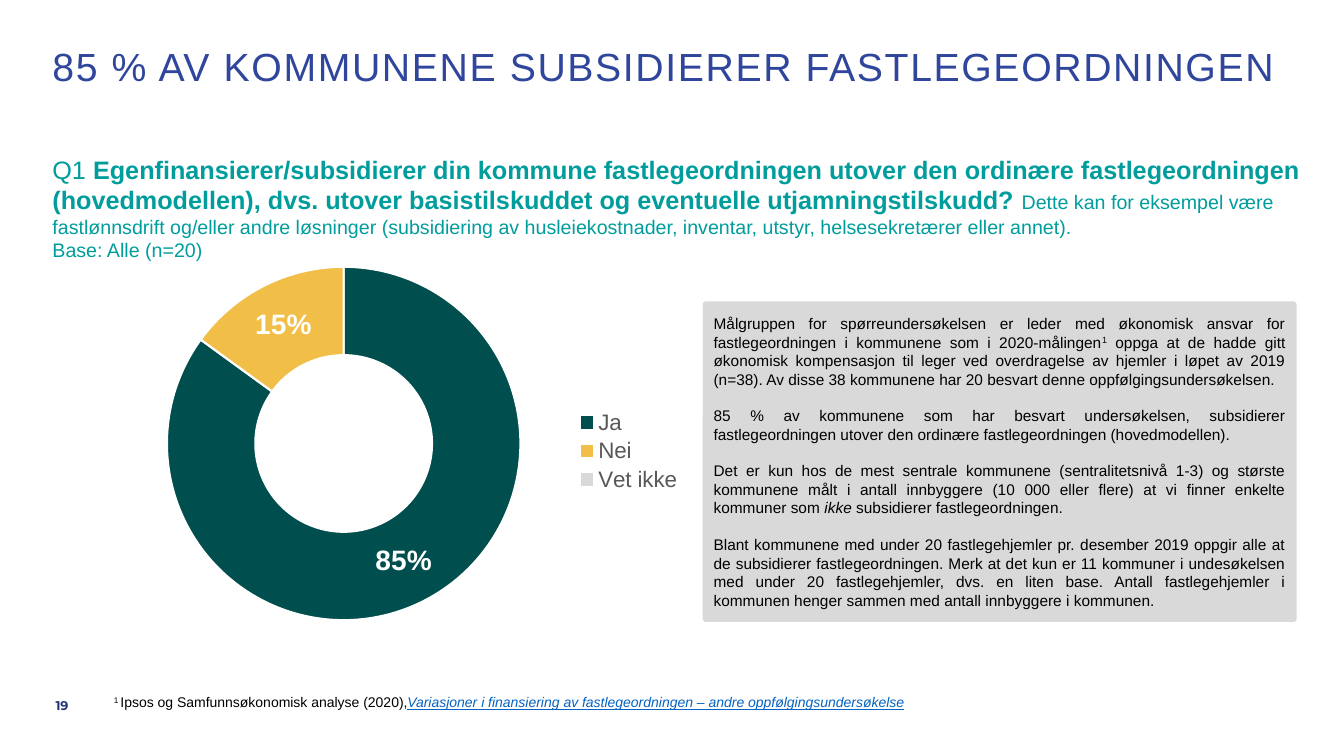
from dataclasses import dataclass
from typing import NamedTuple, Optional

from lxml.etree import SubElement
from pptx import Presentation
from pptx.chart.data import CategoryChartData
from pptx.dml.color import RGBColor
from pptx.enum.chart import XL_CHART_TYPE, XL_LEGEND_POSITION
from pptx.enum.shapes import MSO_SHAPE
from pptx.enum.text import MSO_ANCHOR, MSO_AUTO_SIZE, PP_ALIGN
from pptx.oxml import parse_xml
from pptx.oxml.ns import nsdecls, qn
from pptx.util import Emu, Pt

EMU_PER_PX = 9144


@dataclass(frozen=True)
class Theme:
    font: str = "Arial"
    number_font: str = "Montserrat"
    title: str = "2F469C"
    question: str = "009D9C"
    number: str = "233475"
    text: str = "000000"
    link: str = "0563C1"
    legend: str = "595959"
    panel: str = "D9D9D9"
    white: str = "FFFFFF"
    title_size: int = 28
    label_size: int = 20
    question_size: int = 18
    legend_size: int = 16
    detail_size: int = 14
    panel_size: int = 11
    note_size: int = 10
    number_size: int = 9


THEME = Theme()


class Box(NamedTuple):
    left: int
    top: int
    width: int
    height: int


class Insets(NamedTuple):
    left: int = 10
    top: int = 5
    right: int = 10
    bottom: int = 5


class Span(NamedTuple):
    text: str
    size: int
    color: str = THEME.text
    bold: bool = False
    italic: bool = False
    underline: bool = False
    superscript: bool = False
    spacing: int = 0
    font: str = THEME.font


class Answer(NamedTuple):
    name: str
    share: float
    color: str


def panel_span(text: str, italic: bool = False, superscript: bool = False) -> Span:
    return Span(text, THEME.panel_size, italic=italic, superscript=superscript)


def question_span(text: str, size: int, bold: bool = False) -> Span:
    return Span(text, size, THEME.question, bold)


TITLE = [[Span("85 % AV KOMMUNENE SUBSIDIERER FASTLEGEORDNINGEN",
               THEME.title_size, THEME.title, spacing=120)]]
QUESTION = [
    [question_span("Q1 ", THEME.question_size),
     question_span("Egenfinansierer/subsidierer din kommune fastlegeordningen utover den ordinære "
                   "fastlegeordningen (hovedmodellen), dvs. utover basistilskuddet og eventuelle "
                   "utjamningstilskudd? ", THEME.question_size, bold=True),
     question_span("Dette kan for eksempel være fastlønnsdrift og/eller andre løsninger "
                   "(subsidiering av husleiekostnader, inventar, utstyr, helsesekretærer eller "
                   "annet).", THEME.detail_size)],
    [question_span("Base: Alle (n=20)", THEME.detail_size)],
]
FINDINGS = [
    [panel_span("Målgruppen for spørreundersøkelsen er leder med økonomisk ansvar for "
                "fastlegeordningen i kommunene som i 2020-målingen"),
     panel_span("1", superscript=True),
     panel_span(" oppga at de hadde gitt økonomisk kompensasjon til leger ved overdragelse av "
                "hjemler i løpet av 2019 (n=38). Av disse 38 kommunene har 20 besvart denne "
                "oppfølgingsundersøkelsen.")],
    [panel_span("85 % av kommunene som har besvart undersøkelsen, subsidierer fastlegeordningen "
                "utover den ordinære fastlegeordningen (hovedmodellen).")],
    [panel_span("Det er kun hos de mest sentrale kommunene (sentralitetsnivå 1-3) og største "
                "kommunene målt i antall innbyggere (10 000 eller flere) at vi finner enkelte "
                "kommuner som "),
     panel_span("ikke", italic=True),
     panel_span(" subsidierer fastlegeordningen.")],
    [panel_span("Blant kommunene med under 20 fastlegehjemler pr. desember 2019 oppgir alle at de "
                "subsidierer fastlegeordningen. Merk at det kun er 11 kommuner i undesøkelsen med "
                "under 20 fastlegehjemler, dvs. en liten base. Antall fastlegehjemler i kommunen "
                "henger sammen med antall innbyggere i kommunen.")],
]
FOOTNOTE = [[
    Span("1 ", THEME.note_size, superscript=True),
    Span("Ipsos og Samfunnsøkonomisk analyse (2020),", THEME.note_size),
    Span("Variasjoner i finansiering av fastlegeordningen – andre oppfølgingsundersøkelse",
         THEME.note_size, THEME.link, italic=True, underline=True),
]]
PAGE_NUMBER = [[Span("19", THEME.number_size, THEME.number, bold=True, font=THEME.number_font)]]
ANSWERS = [Answer("Ja", 0.85, "004E4E"), Answer("Nei", 0.15, "F1BE48"),
           Answer("Vet ikke", 0, "D9D9D9")]


def px(length: int) -> Emu:
    return Emu(length * EMU_PER_PX)


def place(shape, box: Box) -> None:
    shape.left, shape.top, shape.width, shape.height = map(px, box)


def style_font(font, size: int, color: str, bold: bool = False, name: str = THEME.font) -> None:
    font.name, font.size, font.bold = name, Pt(size), bold
    font.color.rgb = RGBColor.from_string(color)


def write(shape, paragraphs: list[list[Span]], insets: Insets = Insets(),
          align: PP_ALIGN = PP_ALIGN.LEFT, anchor: MSO_ANCHOR = MSO_ANCHOR.TOP,
          gap: float = 0, line_spacing: Optional[float] = None) -> None:
    frame = shape.text_frame
    frame.word_wrap, frame.auto_size, frame.vertical_anchor = True, MSO_AUTO_SIZE.NONE, anchor
    frame.margin_left, frame.margin_top, frame.margin_right, frame.margin_bottom = map(px, insets)
    for index, spans in enumerate(paragraphs):
        paragraph = frame.add_paragraph() if index else frame.paragraphs[0]
        properties = paragraph._p.get_or_add_pPr()
        properties.set("marL", "0")
        properties.set("indent", "0")
        SubElement(properties, qn("a:buNone"))
        paragraph.alignment = align
        paragraph.space_before = Pt(gap if index else 0)
        if line_spacing:
            paragraph.line_spacing = line_spacing
        for span in spans:
            run = paragraph.add_run()
            run.text = span.text
            style_font(run.font, span.size, span.color, span.bold, span.font)
            run.font.italic, run.font.underline = span.italic, span.underline
            if span.superscript:
                run.font._element.set("baseline", "30000")
            if span.spacing:
                run.font._element.set("spc", str(span.spacing))


def add_answer_chart(slide, box: Box) -> None:
    data = CategoryChartData(number_format="0%")
    data.categories = [answer.name for answer in ANSWERS]
    data.add_series("Series 1", [answer.share for answer in ANSWERS])
    chart = slide.shapes.add_chart(XL_CHART_TYPE.DOUGHNUT, *map(px, box), data).chart
    style_font(chart.font, THEME.note_size, THEME.text)
    chart.has_title = False
    chart.has_legend = True
    chart.legend.position = XL_LEGEND_POSITION.RIGHT
    chart.legend.include_in_layout = False
    style_font(chart.legend.font, THEME.legend_size, THEME.legend)

    plot = chart.plots[0]
    plot.vary_by_categories = True
    plot._element.find(qn("c:holeSize")).set("val", "65")
    series = plot.series[0]
    labels = series.data_labels
    labels.show_value, labels.show_percentage = True, False
    labels.number_format, labels.number_format_is_linked = "0%", False
    style_font(labels.font, THEME.label_size, THEME.white, bold=True)
    for index, answer in enumerate(ANSWERS):
        point = series.points[index].format
        point.fill.solid()
        point.fill.fore_color.rgb = RGBColor.from_string(answer.color)
        point.line.color.rgb = RGBColor.from_string(THEME.white)
        point.line.width = Pt(1.5)
        if not answer.share:
            labels._element.insert(0, parse_xml(
                f'<c:dLbl {nsdecls("c")}><c:idx val="{index}"/><c:delete val="1"/></c:dLbl>'))

    area = chart._chartSpace.chart.plotArea
    for layout in area.findall(qn("c:layout")):
        area.remove(layout)
    area.insert(0, parse_xml(
        f'<c:layout {nsdecls("c")}><c:manualLayout><c:layoutTarget val="inner"/>'
        '<c:xMode val="edge"/><c:yMode val="edge"/><c:x val="0.2"/><c:y val="0.01"/>'
        '<c:w val="0.54"/><c:h val="0.94"/></c:manualLayout></c:layout>'))


def add_panel(slide, box: Box):
    panel = slide.shapes.add_shape(MSO_SHAPE.ROUNDED_RECTANGLE, *map(px, box))
    panel.adjustments[0] = 0.01
    panel.shadow.inherit = False
    panel.fill.solid()
    panel.fill.fore_color.rgb = RGBColor.from_string(THEME.panel)
    panel.line.fill.background()
    return panel


def main() -> None:
    presentation = Presentation()
    presentation.slide_width, presentation.slide_height = px(1333), px(750)
    slide = presentation.slides.add_slide(presentation.slide_layouts[1])
    title, question = slide.placeholders
    place(title, Box(44, 42, 1245, 53))
    write(title, TITLE, Insets(8, 5, 8, 5), anchor=MSO_ANCHOR.MIDDLE, line_spacing=0.9)
    place(question, Box(44, 148, 1281, 113))
    write(question, QUESTION, Insets(8, 5, 8, 0))
    add_answer_chart(slide, Box(34, 261, 653, 373))
    write(add_panel(slide, Box(697, 299, 589, 318)), FINDINGS,
          align=PP_ALIGN.JUSTIFY, anchor=MSO_ANCHOR.MIDDLE, gap=13)
    number = slide.shapes.add_textbox(*map(px, Box(42, 680, 26, 40)))
    write(number, PAGE_NUMBER, Insets(0, 5, 0, 5), PP_ALIGN.RIGHT, MSO_ANCHOR.MIDDLE)
    footnote = slide.shapes.add_textbox(*map(px, Box(103, 683, 969, 44)))
    write(footnote, FOOTNOTE, align=PP_ALIGN.JUSTIFY)
    presentation.save("out.pptx")


if __name__ == "__main__":
    main()
